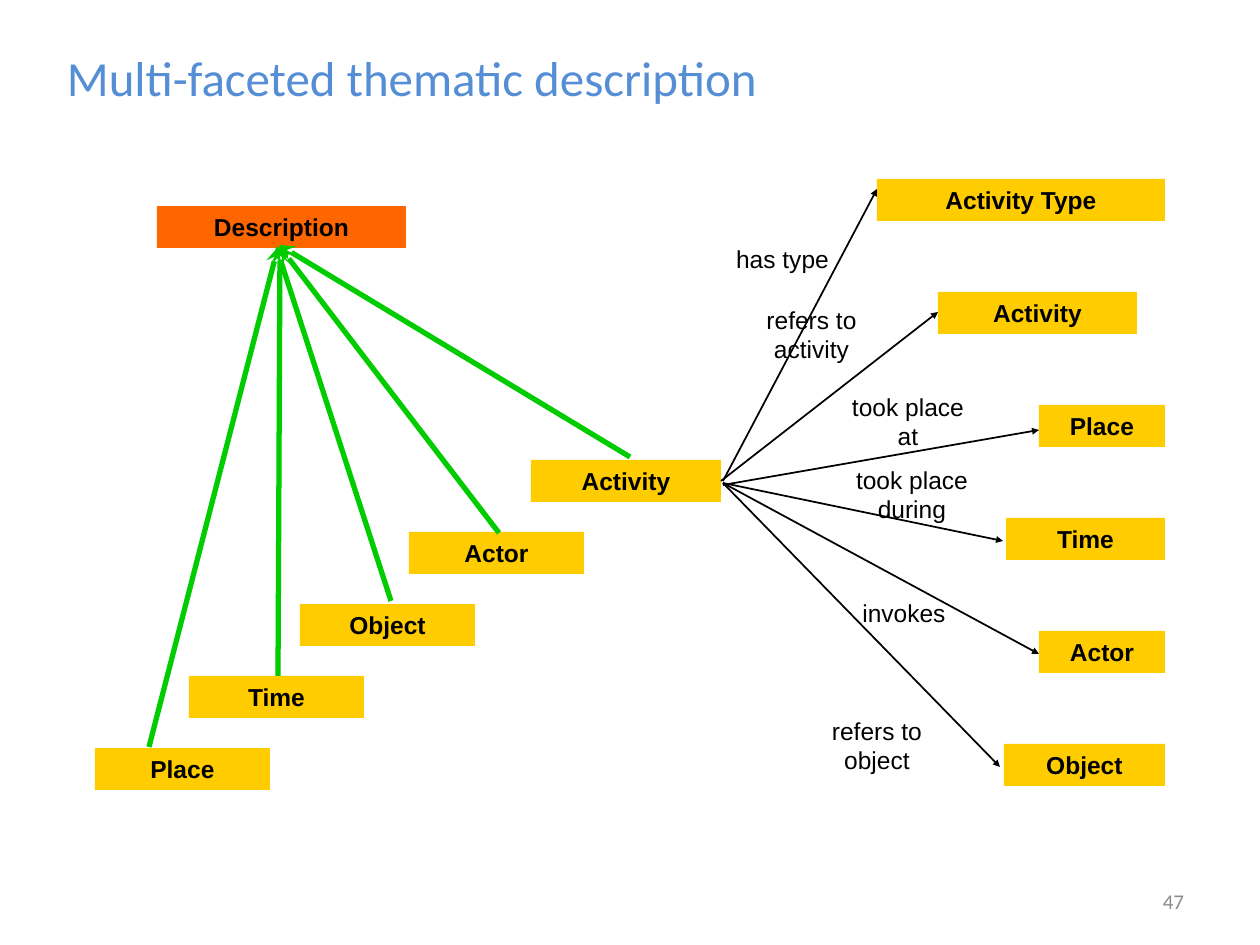
import pptx
import pptx.util
import pptx.dml.color
import pptx.enum.shapes
import pptx.enum.text
import pptx.oxml.ns
import lxml.etree

PX = 914400 / 126
BOX_HEIGHT = 42
YELLOW, ORANGE, GREEN, BLACK = "FFCC00", "FF6600", "00CC00", "000000"
ALIGN = pptx.enum.text.PP_ALIGN
ANCHOR = pptx.enum.text.MSO_ANCHOR

TITLE = "Multi-faceted thematic description"
PAGE_NUMBER = "47"

# Facets of the description: name, left, width, arrow start, arrow end
FACET_TOP, FACET_STEP = 460, 72
FACETS = [
    ("Activity", 531, 190, (630, 457), (279, 245)),
    ("Actor", 409, 175, (499, 533), (280, 247)),
    ("Object", 300, 175, (391, 601), (276, 246)),
    ("Time", 189, 175, (278, 676), (280, 246)),
    ("Place", 95, 175, (149, 747), (278, 247)),
]

# Things an activity relates to: name, left, width, arrow start, arrow end
TARGET_TOP, TARGET_STEP = 179, 113
TARGETS = [
    ("Activity Type", 877, 288, (723, 481), (877, 189)),
    ("Activity", 938, 199, (721, 481), (938, 312)),
    ("Place", 1039, 126, (723, 485), (1039, 430)),
    ("Time", 1006, 159, (723, 483), (1003, 541)),
    ("Actor", 1039, 126, (723, 483), (1039, 654)),
    ("Object", 1004, 161, (723, 483), (1000, 767)),
]

# Relation names: text, left, top, width, side margin (wide ones break the line)
RELATIONS = [
    ("has type", 724, 238, 117, 11),
    ("refers to activity", 713, 313, 197, 20),
    ("took place at", 826, 400, 164, 20),
    ("took place during", 806, 473, 212, 20),
    ("invokes", 850, 592, 108, 11),
    ("refers to object", 784, 724, 186, 20),
]


def emu(px):
    return round(px * PX)


def color(value):
    return pptx.dml.color.RGBColor.from_string(value)


def write(shape, text, size, font, ink, align, anchor, bold=False, side=13):
    frame = shape.text_frame
    frame.word_wrap = True
    frame.vertical_anchor = anchor
    frame.margin_left = frame.margin_right = emu(side)
    frame.margin_top = frame.margin_bottom = emu(6)
    para = frame.paragraphs[0]
    para.alignment = align
    span = para.add_run()
    span.text = text
    span.font.size = pptx.util.Pt(size)
    span.font.name = font
    span.font.bold = bold
    span.font.color.rgb = color(ink)


def add_text(page, area, *style, **options):
    box = page.shapes.add_textbox(*map(emu, area))
    write(box, *style, **options)


def add_box(page, name, left, top, width, fill):
    box = page.shapes.add_shape(
        pptx.enum.shapes.MSO_SHAPE.RECTANGLE,
        *map(emu, (left, top, width, BOX_HEIGHT)))
    box.shadow.inherit = False
    box.fill.solid()
    box.fill.fore_color.rgb = color(fill)
    box.line.fill.background()
    write(box, name, 14, "Arial", BLACK, ALIGN.CENTER, ANCHOR.TOP, bold=True)


def add_arrow(page, start, end, ink, width, head, head_size):
    arrow = page.shapes.add_connector(
        pptx.enum.shapes.MSO_CONNECTOR.STRAIGHT, *map(emu, start + end))
    arrow.line.color.rgb = color(ink)
    arrow.line.width = pptx.util.Pt(width)
    qn = pptx.oxml.ns.qn
    lxml.etree.SubElement(arrow.line._get_or_add_ln(), qn("a:tailEnd"),
                          type=head, w=head_size, len=head_size)
    lxml.etree.SubElement(arrow._element.spPr, qn("a:effectLst"))


def main():
    deck = pptx.Presentation()
    deck.slide_width = pptx.util.Inches(10)
    deck.slide_height = pptx.util.Inches(7.5)
    page = deck.slides.add_slide(deck.slide_layouts[6])

    # Title
    add_text(page, (54, 41, 959, 72), TITLE, 28, "Calibri", "558ED5",
             ALIGN.LEFT, ANCHOR.TOP)

    # Description and its facets
    add_box(page, "Description", 157, 206, 249, ORANGE)
    for row, (name, left, width, start, end) in enumerate(FACETS):
        add_box(page, name, left, FACET_TOP + row * FACET_STEP, width, YELLOW)
        add_arrow(page, start, end, GREEN, 3, "stealth", "med")

    # Activity and its relations
    for row, (name, left, width, start, end) in enumerate(TARGETS):
        add_box(page, name, left, TARGET_TOP + row * TARGET_STEP, width, YELLOW)
        add_arrow(page, start, end, BLACK, 1, "triangle", "sm")
    for name, left, top, width, side in RELATIONS:
        add_text(page, (left, top, width, BOX_HEIGHT), name, 14, "Arial", BLACK,
                 ALIGN.CENTER, ANCHOR.MIDDLE, side=side)

    # Page number
    add_text(page, (903, 876, 294, 50), PAGE_NUMBER, 12, "Calibri", "8C8C8C",
             ALIGN.RIGHT, ANCHOR.MIDDLE)

    deck.save("out.pptx")


if __name__ == "__main__":
    main()
